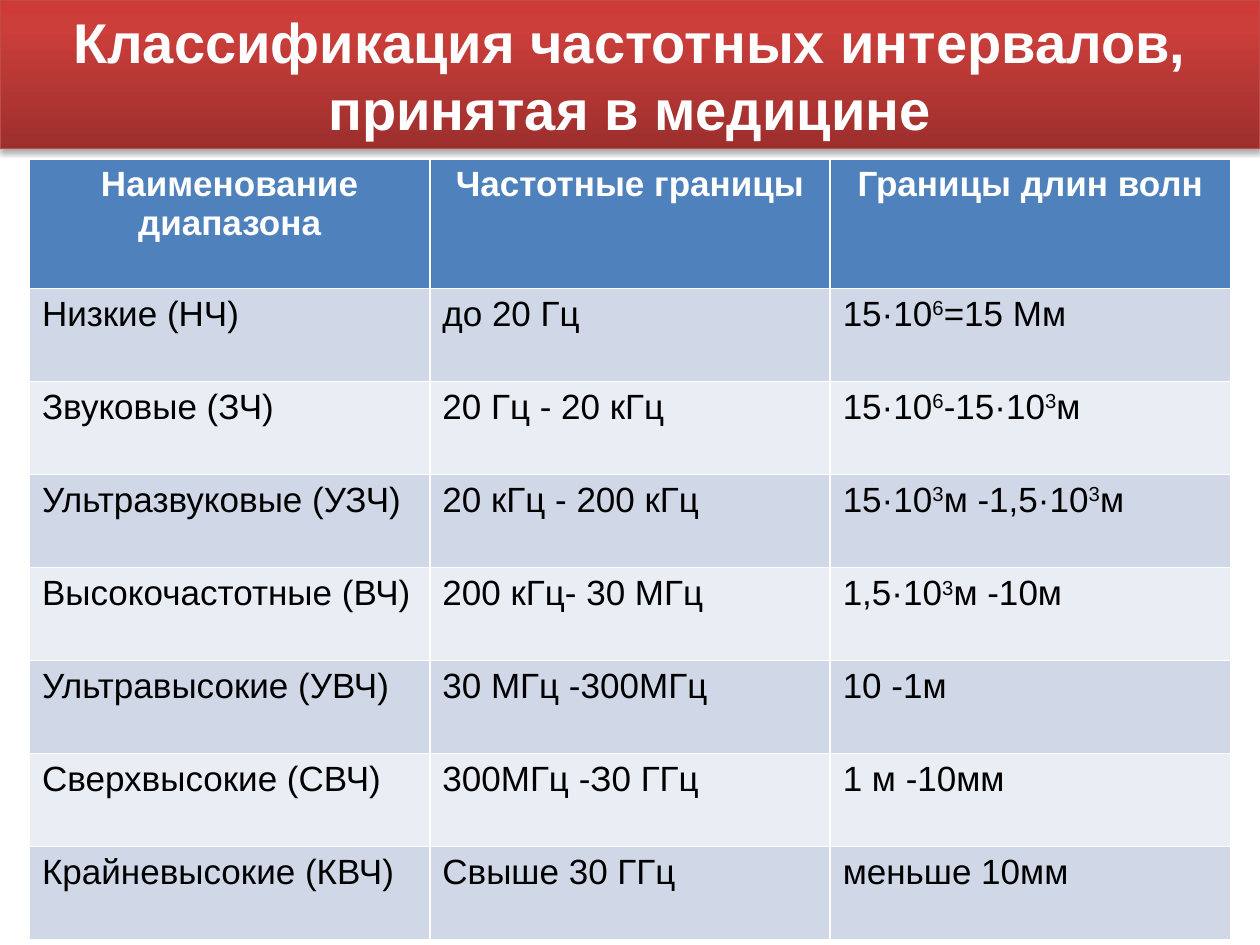
from lxml import etree
from pptx import Presentation
from pptx.dml.color import RGBColor
from pptx.enum import text
from pptx.util import Pt

TITLE = "Классификация частотных интервалов, принятая в медицине"
HEADER = ("Наименование диапазона", "Частотные границы", "Границы длин волн")
# Text between a pair of ^ marks is superscript.
BANDS = [
    ("Низкие (НЧ)", "до 20 Гц", "15·10^6^=15 Мм"),
    ("Звуковые (ЗЧ)", "20 Гц - 20 кГц", "15·10^6^-15·10^3^м"),
    ("Ультразвуковые (УЗЧ)", "20 кГц - 200 кГц", "15·10^3^м -1,5·10^3^м"),
    ("Высокочастотные (ВЧ)", "200 кГц- 30 МГц", "1,5·10^3^м -10м"),
    ("Ультравысокие (УВЧ)", "30 МГц -300МГц", "10 -1м"),
    ("Сверхвысокие (СВЧ)", "300МГц -З0 ГГц", "1 м -10мм"),
    ("Крайневысокие (КВЧ)", "Свыше 30 ГГц", "меньше 10мм"),
]
FONT = "Arial"
HEADER_FILL, BAND_FILLS = "4F81BD", ("D0D8E8", "E9EDF4")
HEADER_HEIGHT, ROW_HEIGHT, COLUMN_WIDTH = 74, 53.2, 228.8
TABLE_LEFT, TABLE_TOP = 16.8, 90.8

A = "http://schemas.openxmlformats.org/drawingml/2006/main"
GRADIENT = f"""<a:gradFill xmlns:a="{A}" rotWithShape="1"><a:gsLst>
<a:gs pos="0"><a:srgbClr val="9C2F2D"/></a:gs>
<a:gs pos="80000"><a:srgbClr val="CB3E3A"/></a:gs>
<a:gs pos="100000"><a:srgbClr val="CE3B37"/></a:gs>
</a:gsLst><a:lin ang="16200000" scaled="0"/></a:gradFill>"""
SHADOW = f"""<a:effectLst xmlns:a="{A}">
<a:outerShdw blurRad="39370" dist="22860" dir="5400000" rotWithShape="0">
<a:srgbClr val="000000"><a:alpha val="35000"/></a:srgbClr>
</a:outerShdw></a:effectLst>"""


def color(value):
    return RGBColor.from_string(value)


def style_font(font, size, value, bold):
    font.name, font.size, font.bold = FONT, Pt(size), bold
    font.color.rgb = color(value)


def add_title(slide):
    title = slide.shapes.title
    title.left, title.top, title.width, title.height = Pt(0), Pt(0), Pt(720), Pt(85)
    title.line.color.rgb = color("BF4C48")
    title.line.width = Pt(0.75)
    properties = title._element.spPr
    line = properties.find(f"{{{A}}}ln")
    line.addprevious(etree.fromstring(GRADIENT))
    line.addnext(etree.fromstring(SHADOW))
    frame = title.text_frame
    frame.text = TITLE
    frame.word_wrap = True
    frame.auto_size = text.MSO_AUTO_SIZE.NONE
    frame.vertical_anchor = text.MSO_ANCHOR.MIDDLE
    paragraph = frame.paragraphs[0]
    paragraph.alignment = text.PP_ALIGN.CENTER
    style_font(paragraph.font, 32, "FFFFFF", True)


def fill_cell(cell, content, fill, is_header):
    cell.fill.solid()
    cell.fill.fore_color.rgb = color(fill)
    paragraph = cell.text_frame.paragraphs[0]
    if is_header:
        paragraph.alignment = text.PP_ALIGN.CENTER
    for index, part in enumerate(content.split("^")):
        run = paragraph.add_run()
        run.text = part
        style_font(run.font, 20, "FFFFFF" if is_header else "000000", is_header)
        if index % 2:
            run._r.get_or_add_rPr().set("baseline", "30000")


def add_band_table(slide):
    rows = [HEADER, *BANDS]
    heights = [HEADER_HEIGHT] + [ROW_HEIGHT] * len(BANDS)
    table = slide.shapes.add_table(
        len(rows), len(HEADER), Pt(TABLE_LEFT), Pt(TABLE_TOP),
        Pt(COLUMN_WIDTH * len(HEADER)), Pt(sum(heights))).table
    for column in table.columns:
        column.width = Pt(COLUMN_WIDTH)
    for index, (row, height, contents) in enumerate(zip(table.rows, heights, rows)):
        row.height = Pt(height)
        fill = BAND_FILLS[(index - 1) % 2] if index else HEADER_FILL
        for cell, content in zip(row.cells, contents):
            fill_cell(cell, content, fill, index == 0)


presentation = Presentation()
presentation.slide_width, presentation.slide_height = Pt(720), Pt(540)
slide = presentation.slides.add_slide(presentation.slide_layouts[5])
add_title(slide)
add_band_table(slide)
presentation.save("out.pptx")
